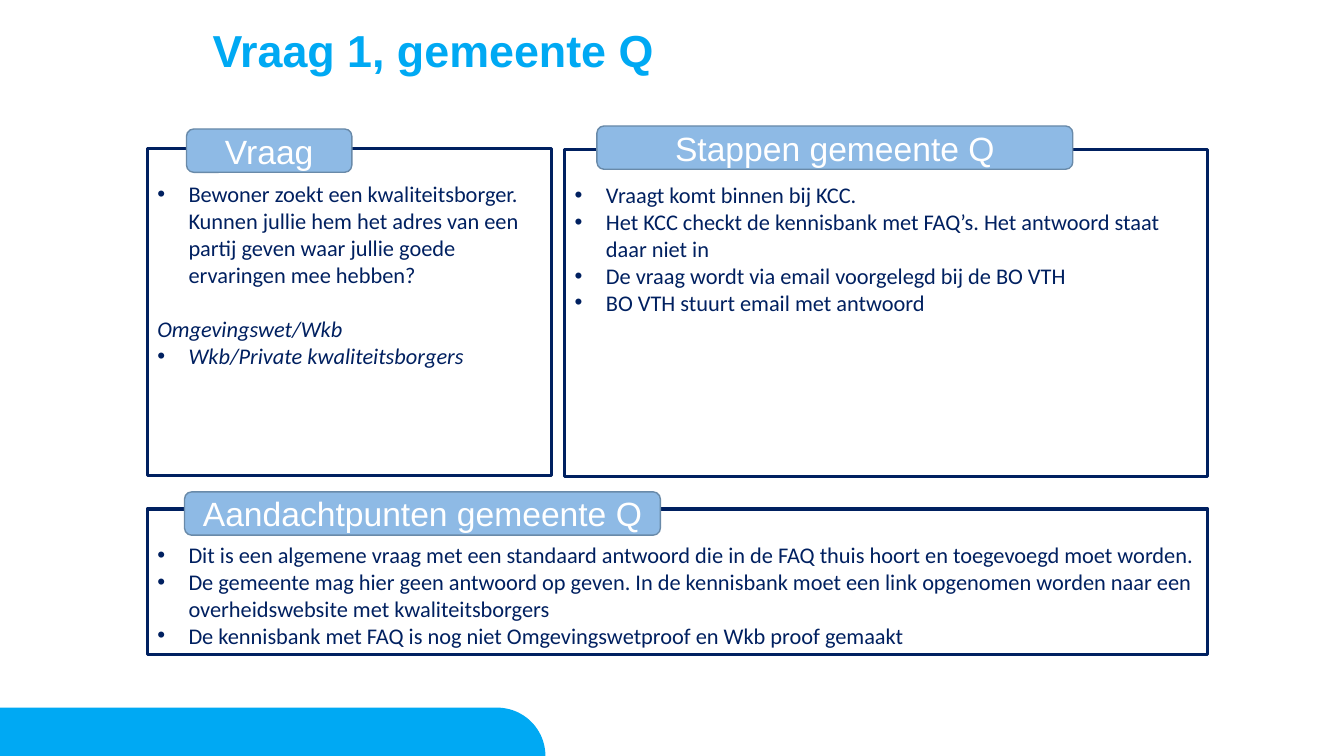
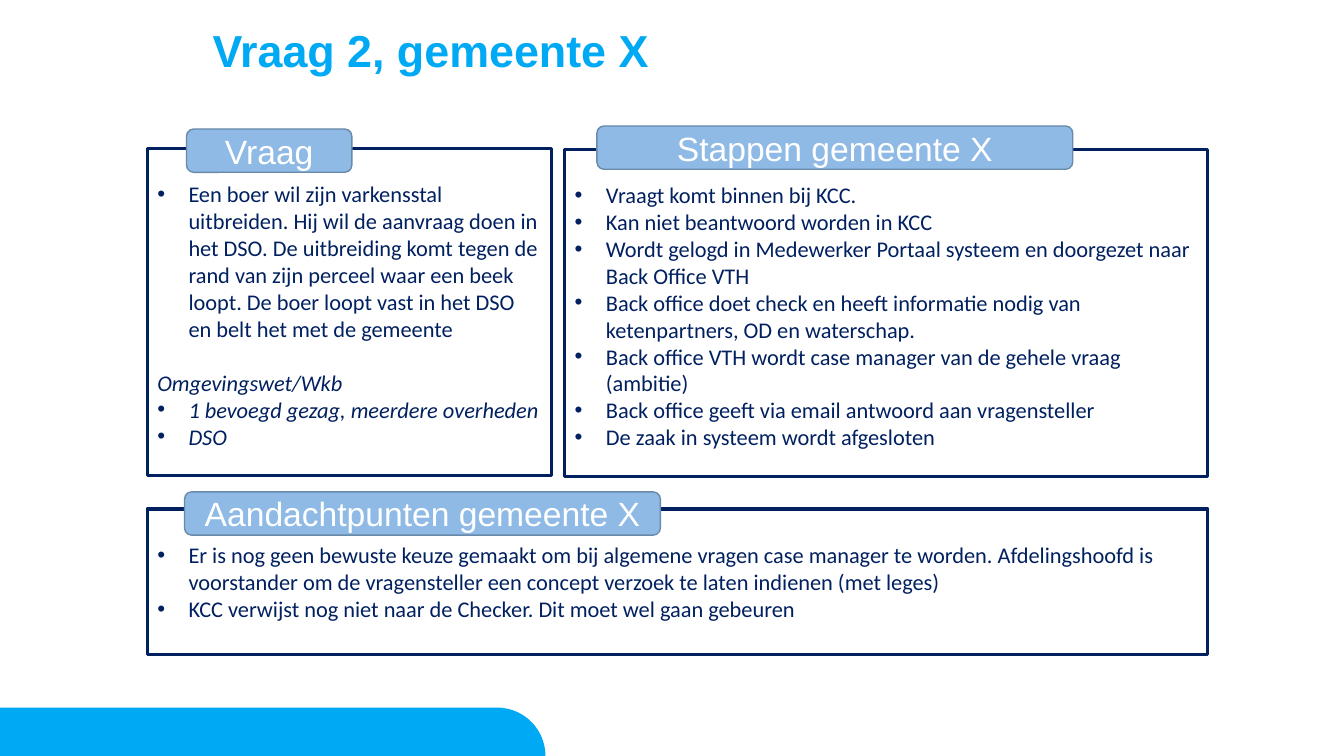
from dataclasses import dataclass
from math import cos, pi, sin

from lxml import etree
from pptx import Presentation
from pptx import util as u
from pptx.dml.color import RGBColor
from pptx.enum import shapes, text
from pptx.oxml.ns import qn

WIDE, HIGH = 13.33, 7.5
SKY, NAVY, PALE, STEEL, WHITE = "00A9F3", "002060", "8EBAE5", "698AA9", "FFFFFF"
HEAD, BODY = "Arial", "Calibri"
INDENT = 0.31
LINE = 19.5  # height in points of one line of body text


@dataclass(frozen=True)
class Box:
    left: float
    top: float
    width: float
    height: float

    def place(self, shape) -> None:
        shape.left, shape.top = u.Inches(self.left), u.Inches(self.top)
        shape.width, shape.height = u.Inches(self.width), u.Inches(self.height)


@dataclass(frozen=True)
class Panel:
    slot: int
    frame: Box
    tab: Box


@dataclass(frozen=True)
class Item:
    words: str
    bullet: bool = True
    italic: bool = False
    before: float = 0


@dataclass(frozen=True)
class Case:
    number: int
    town: str
    question: str
    topics: list[str]
    steps: list[str]
    points: list[str]


TITLE = Box(2.01, 0.24, 10.13, 0.78)
PANELS = [
    Panel(1, Box(1.46, 1.47, 4.01, 3.25), Box(1.85, 1.28, 1.64, 0.43)),
    Panel(2, Box(5.6, 1.48, 6.38, 3.25), Box(5.92, 1.25, 4.72, 0.43)),
    Panel(3, Box(1.46, 5.05, 10.52, 1.44), Box(1.83, 4.88, 4.72, 0.43)),
]

CASES = [
    Case(
        1, "Q",
        "Bewoner zoekt een kwaliteitsborger. Kunnen jullie hem het adres van een "
        "partij geven waar jullie goede ervaringen mee hebben?",
        ["Wkb/Private kwaliteitsborgers"],
        [
            "Vraagt komt binnen bij KCC.",
            "Het KCC checkt de kennisbank met FAQ’s. Het antwoord staat daar niet in",
            "De vraag wordt via email voorgelegd bij de BO VTH",
            "BO VTH stuurt email met antwoord",
        ],
        [
            "Dit is een algemene vraag met een standaard antwoord die in de FAQ "
            "thuis hoort en toegevoegd moet worden.",
            "De gemeente mag hier geen antwoord op geven. In de kennisbank moet een "
            "link opgenomen worden naar een overheidswebsite met kwaliteitsborgers",
            "De kennisbank met FAQ is nog niet Omgevingswetproof en Wkb proof gemaakt",
        ],
    ),
    Case(
        2, "X",
        "Een boer wil zijn varkensstal uitbreiden. Hij wil de aanvraag doen in het "
        "DSO. De uitbreiding komt tegen de rand van zijn perceel waar een beek "
        "loopt. De boer loopt vast in het DSO en belt het met de gemeente",
        ["1 bevoegd gezag, meerdere overheden", "DSO"],
        [
            "Vraagt komt binnen bij KCC.",
            "Kan niet beantwoord worden in KCC",
            "Wordt gelogd in Medewerker Portaal systeem en doorgezet naar Back Office VTH",
            "Back office doet check en heeft informatie nodig van ketenpartners, "
            "OD en waterschap.",
            "Back office VTH wordt case manager van de gehele vraag (ambitie)",
            "Back office geeft via email antwoord aan vragensteller",
            "De zaak in systeem wordt afgesloten",
        ],
        [
            "Er is nog geen bewuste keuze gemaakt om bij algemene vragen case manager "
            "te worden. Afdelingshoofd is voorstander om de vragensteller een concept "
            "verzoek te laten indienen (met leges)",
            "KCC verwijst nog niet naar de Checker. Dit moet wel gaan gebeuren",
        ],
    ),
]


def color(code: str) -> RGBColor:
    return RGBColor.from_string(code)


def stroke(shape, code: str, width: float) -> None:
    shape.line.color.rgb = color(code)
    shape.line.width = u.Pt(width)


def fill(shape, code: str) -> None:
    shape.fill.solid()
    shape.fill.fore_color.rgb = color(code)
    shape.shadow.inherit = False


def write(para, words: str, *, size: float, font: str, code: str, bold: bool = False,
          italic: bool = False, align=text.PP_ALIGN.LEFT, before: float = 0,
          line: float = 1.0) -> None:
    para.alignment = align
    para.space_before, para.space_after = u.Pt(before), u.Pt(0)
    para.line_spacing = line
    run = para.add_run()
    run.text = words
    face = run.font
    face.size, face.name = u.Pt(size), font
    face.bold, face.italic = bold, italic
    face.color.rgb = color(code)


def mark(para, bullet: bool) -> None:
    """Give a paragraph a hanging bullet, or clear the inherited one."""
    props = para._p.get_or_add_pPr()
    inset = u.Inches(INDENT) if bullet else 0
    props.set("marL", str(inset))
    props.set("indent", str(-inset))
    if bullet:
        etree.SubElement(props, qn("a:buFont")).set("typeface", "Arial")
        etree.SubElement(props, qn("a:buChar")).set("char", "•")
    else:
        etree.SubElement(props, qn("a:buNone"))


def setup(frame, anchor) -> None:
    frame.word_wrap = True
    frame.auto_size = text.MSO_AUTO_SIZE.NONE
    frame.vertical_anchor = anchor


def band(slide) -> None:
    """Draw the footer band with its rounded top right corner."""
    top, right = 7.02, 5.41
    radius = HIGH - top
    arc = [(right - radius * (1 - sin(a)), HIGH - radius * cos(a))
           for a in (pi / 2 * i / 24 for i in range(25))]
    pen = slide.shapes.build_freeform(0, u.Inches(HIGH), scale=1.0)
    pen.add_line_segments(
        [(u.Inches(x), u.Inches(y)) for x, y in [(0, top), *arc]], close=True)
    shape = pen.convert_to_shape()
    fill(shape, SKY)
    shape.line.fill.background()


def fill_list(holder, box: Box, items: list[Item]) -> None:
    box.place(holder)
    stroke(holder, NAVY, 2.25)
    frame = holder.text_frame
    setup(frame, text.MSO_ANCHOR.TOP)
    frame.margin_top = u.Inches(0.32)
    for i, item in enumerate(items):
        para = frame.add_paragraph() if i else frame.paragraphs[0]
        mark(para, item.bullet)
        write(para, item.words, size=16, font=BODY, code=NAVY,
              italic=item.italic, before=item.before)


def add_tab(slide, box: Box, words: str) -> None:
    tab = slide.shapes.add_shape(shapes.MSO_SHAPE.ROUNDED_RECTANGLE, 0, 0, 0, 0)
    box.place(tab)
    fill(tab, PALE)
    stroke(tab, STEEL, 1)
    setup(tab.text_frame, text.MSO_ANCHOR.MIDDLE)
    write(tab.text_frame.paragraphs[0], words, size=24, font=HEAD, code=WHITE,
          align=text.PP_ALIGN.CENTER)


def build(deck, case: Case) -> None:
    slide = deck.slides.add_slide(deck.slide_layouts.get_by_name("Comparison"))
    band(slide)
    title = slide.shapes.title
    TITLE.place(title)
    setup(title.text_frame, text.MSO_ANCHOR.TOP)
    write(title.text_frame.paragraphs[0], f"Vraag {case.number}, gemeente {case.town}",
          size=32, font=HEAD, code=SKY, bold=True, line=0.9)

    ask = [Item(case.question),
           Item("Omgevingswet/Wkb", bullet=False, italic=True, before=LINE),
           *(Item(topic, italic=True) for topic in case.topics)]
    parts = [
        ("Vraag", ask),
        (f"Stappen gemeente {case.town}", [Item(s) for s in case.steps]),
        (f"Aandachtpunten gemeente {case.town}", [Item(p) for p in case.points]),
    ]
    slots = {h.placeholder_format.idx: h for h in slide.placeholders}
    for panel, (name, items) in zip(PANELS, parts):
        fill_list(slots[panel.slot], panel.frame, items)
        add_tab(slide, panel.tab, name)
    spare = slots[4].element
    spare.getparent().remove(spare)


def main() -> None:
    deck = Presentation()
    deck.slide_width, deck.slide_height = u.Inches(WIDE), u.Inches(HIGH)
    for case in CASES:
        build(deck, case)
    deck.save("out.pptx")


if __name__ == "__main__":
    main()
